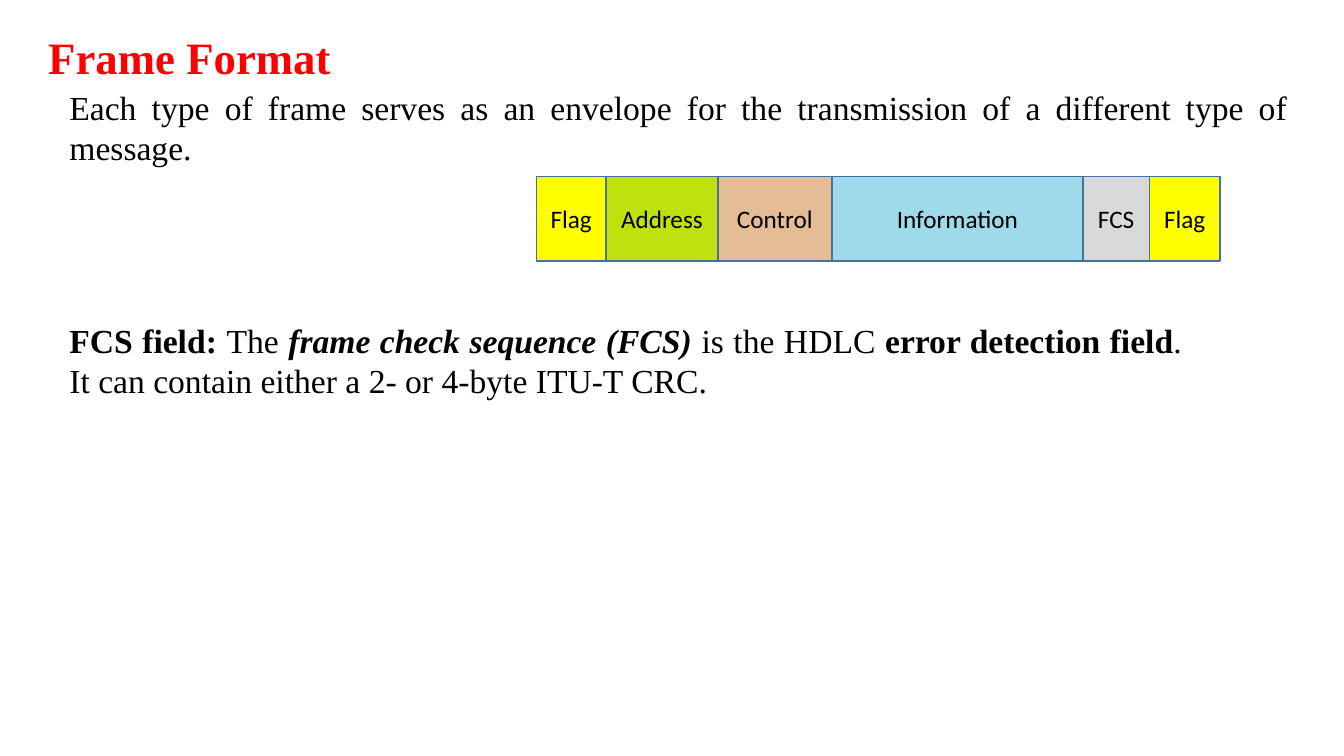
from dataclasses import dataclass

from pptx import Presentation
from pptx.dml.color import RGBColor
from pptx.enum.shapes import MSO_SHAPE
from pptx.enum.text import MSO_ANCHOR, MSO_AUTO_SIZE, PP_ALIGN
from pptx.util import Inches, Pt

RECT = MSO_SHAPE.RECTANGLE
MIDDLE = MSO_ANCHOR.MIDDLE
GROW = MSO_AUTO_SIZE.SHAPE_TO_FIT_TEXT
LEFT, CENTER, JUSTIFY = PP_ALIGN.LEFT, PP_ALIGN.CENTER, PP_ALIGN.JUSTIFY


@dataclass(frozen=True)
class Theme:
    serif: str = "Times New Roman"
    sans: str = "Calibri"
    title_size: int = 32
    body_size: int = 24
    field_size: int = 18
    title: str = "FF0000"
    ink: str = "000000"
    edge: str = "43739E"
    yellow: str = "FFFF00"
    green: str = "BFE10E"
    tan: str = "E4BC96"
    blue: str = "9FDAEA"
    gray: str = "D9D9D9"


theme = Theme()


def add_run(para, text, font, size, color, bold=False, italic=False):
    run = para.add_run()
    run.text = text
    run.font.name = font
    run.font.size = Pt(size)
    run.font.color.rgb = RGBColor.from_string(color)
    run.font.bold = bold
    run.font.italic = italic


def add_box(left, top, width, height, align, wrap=True):
    """Add a text box that grows with its text; return its first paragraph."""
    box = slide.shapes.add_textbox(
        Inches(left), Inches(top), Inches(width), Inches(height))
    frame = box.text_frame
    frame.word_wrap = wrap
    frame.auto_size = GROW
    para = frame.paragraphs[0]
    para.alignment = align
    return para


deck = Presentation()
deck.slide_width = Inches(13.33)
deck.slide_height = Inches(7.5)
slide = deck.slides.add_slide(deck.slide_layouts[6])

# Title and introduction
intro = add_box(0.59, 0.81, 12.28, 0.91, JUSTIFY)
add_run(intro, "Each type of frame serves as an envelope for the transmission "
        "of a different type of message.",
        theme.serif, theme.body_size, theme.ink)

title = add_box(0.38, -0.02, 3.03, 0.81, LEFT, wrap=False)
title.line_spacing = 1.5
add_run(title, "Frame Format", theme.serif, theme.title_size, theme.title,
        bold=True)

# Frame fields, laid side by side
fields = [
    ("Flag", 0.69, theme.yellow),
    ("Address", 1.11, theme.green),
    ("Control", 1.13, theme.tan),
    ("Information", 2.49, theme.blue),
    ("FCS", 0.66, theme.gray),
    ("Flag", 0.7, theme.yellow),
]
left = 5.32
for name, width, fill in fields:
    field = slide.shapes.add_shape(
        RECT, Inches(left), Inches(1.75), Inches(width), Inches(0.84))
    field.shadow.inherit = False
    field.fill.solid()
    field.fill.fore_color.rgb = RGBColor.from_string(fill)
    field.line.color.rgb = RGBColor.from_string(theme.edge)
    field.line.width = Pt(1)
    field.text_frame.word_wrap = True
    field.text_frame.vertical_anchor = MIDDLE
    label = field.text_frame.paragraphs[0]
    label.alignment = CENTER
    add_run(label, name, theme.sans, theme.field_size, theme.ink)
    left += width

# Explanation of the FCS field: text, bold, italic
note = add_box(0.59, 3.12, 11.23, 0.91, JUSTIFY)
for text, bold, italic in [
    ("FCS field: ", True, False),
    ("The ", False, False),
    ("frame check sequence (FCS) ", True, True),
    ("is the HDLC ", False, False),
    ("error detection field", True, False),
    (". It can contain either a 2- or 4-byte ITU-T CRC.", False, False),
]:
    add_run(note, text, theme.serif, theme.body_size, theme.ink, bold, italic)

deck.save("out.pptx")
